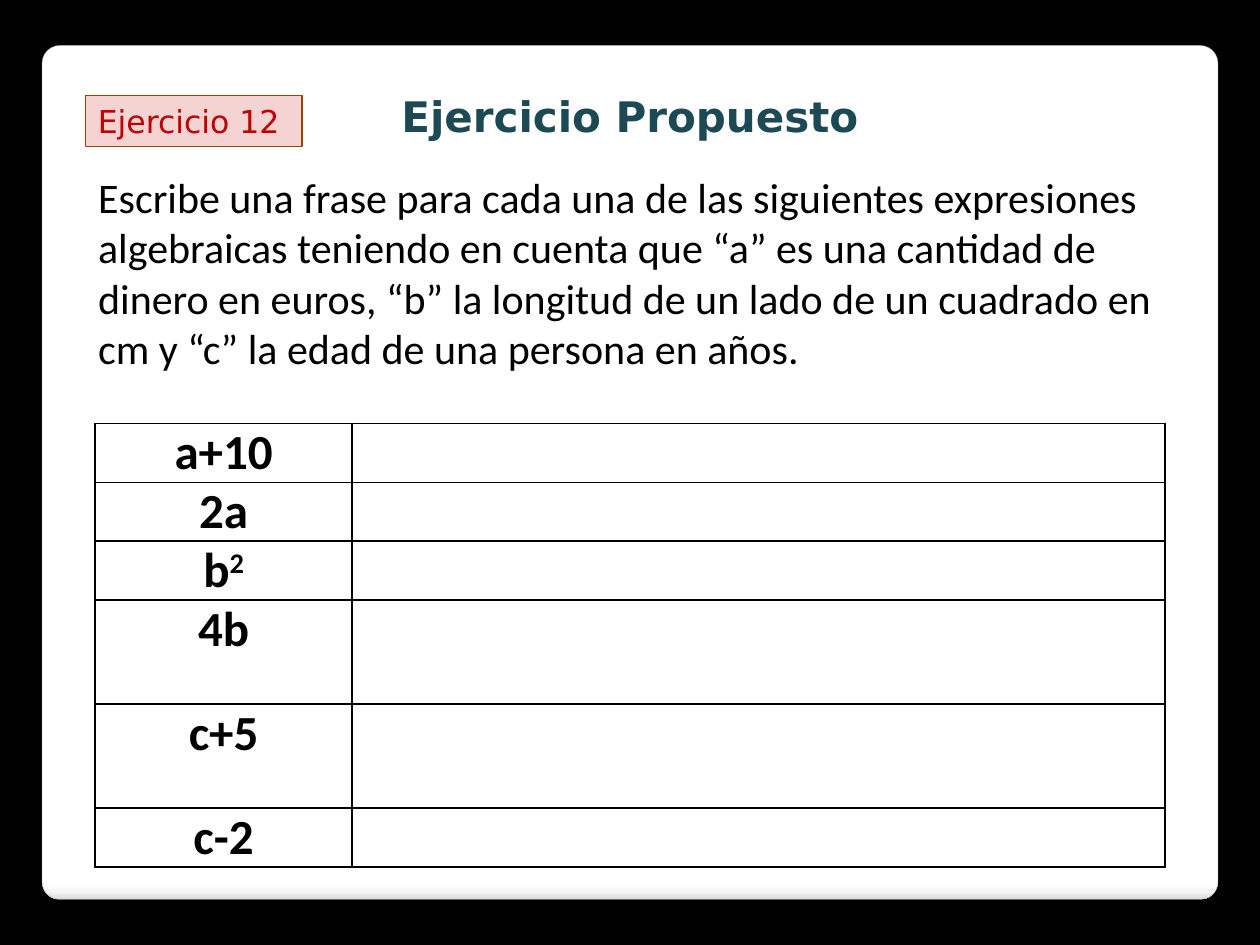
from pptx import Presentation
from pptx.dml.color import RGBColor
from pptx.enum.shapes import MSO_AUTO_SHAPE_TYPE as Shape
from pptx.enum.text import MSO_ANCHOR as Anchor, PP_ALIGN as Align
from pptx.oxml import parse_xml
from pptx.oxml.ns import nsdecls
from pptx.util import Pt

BLACK = RGBColor(0x00, 0x00, 0x00)
WHITE = RGBColor(0xFF, 0xFF, 0xFF)
PALE_GREY = RGBColor(0xF7, 0xF7, 0xF7)
LIGHT_GREY = RGBColor(0xDA, 0xDA, 0xDA)
GREY = RGBColor(0xA4, 0xA4, 0xA4)
TEAL = RGBColor(0x1C, 0x49, 0x54)
PINK = RGBColor(0xF5, 0xD3, 0xD3)
BROWN = RGBColor(0x96, 0x43, 0x05)
RED = RGBColor(0xC0, 0x00, 0x00)

HEADING_FONT = "DejaVu Sans"
BODY_FONT = "Calibri"

PANEL_STOPS = [(0, WHITE), (98, WHITE), (99, PALE_GREY), (100, LIGHT_GREY)]
STATEMENT = (
    "Escribe una frase para cada una de las siguientes expresiones algebraicas "
    "teniendo en cuenta que “a” es una cantidad de dinero en euros, “b” la longitud "
    "de un lado de un cuadrado en cm y “c” la edad de una persona en años."
)
SHORT_ROW, TALL_ROW = 33.7, 59.4
# Each row: base, exponent, height
EXPRESSIONS = [
    ("a+10", "", SHORT_ROW),
    ("2a", "", SHORT_ROW),
    ("b", "2", SHORT_ROW),
    ("4b", "", TALL_ROW),
    ("c+5", "", TALL_ROW),
    ("c-2", "", SHORT_ROW),
]


def add_span(para, text, *, size, font=BODY_FONT, color=BLACK, bold=False, raised=False):
    span = para.add_run()
    span.text = text
    span.font.size = Pt(size)
    span.font.name = font
    span.font.bold = bold
    span.font.color.rgb = color
    if raised:
        span.font._element.set("baseline", "30000")


class ExercisePage:
    """Draws the elements of one exercise slide; lengths are in points."""

    def __init__(self, page):
        self.page = page
        page.background.fill.solid()
        page.background.fill.fore_color.rgb = BLACK

    def shape(self, kind, area, line_color, line_width):
        box = self.page.shapes.add_shape(kind, *map(Pt, area))
        box.shadow.inherit = False
        box.line.color.rgb = line_color
        box.line.width = Pt(line_width)
        return box

    def panel(self, area, corner, stops):
        box = self.shape(Shape.ROUNDED_RECTANGLE, area, GREY, 0.16)
        box.adjustments[0] = corner
        stop_xml = "".join(
            f'<a:gs pos="{percent * 1000}"><a:srgbClr val="{color}"/></a:gs>'
            for percent, color in stops
        )
        box.fill.background()
        no_fill = box._element.spPr.find("{*}noFill")
        no_fill.getparent().replace(no_fill, parse_xml(
            f'<a:gradFill {nsdecls("a")}><a:gsLst>{stop_xml}</a:gsLst>'
            '<a:lin ang="5400000" scaled="0"/></a:gradFill>'
        ))

    def label(self, text, area, fill, **style):
        box = self.shape(Shape.RECTANGLE, area, BROWN, 0.75)
        box.fill.solid()
        box.fill.fore_color.rgb = fill
        self.fill_text(box, text, **style)

    def text(self, text, area, **style):
        self.fill_text(self.page.shapes.add_textbox(*map(Pt, area)), text, **style)

    def fill_text(self, box, text, align=Align.LEFT, **style):
        frame = box.text_frame
        frame.word_wrap = True
        frame.vertical_anchor = Anchor.TOP
        para = frame.paragraphs[0]
        para.alignment = align
        add_span(para, text, **style)

    def table(self, rows, left, top, widths):
        """Place the expressions in the first column, leaving the second for answers."""
        height = sum(row[2] for row in rows)
        table = self.page.shapes.add_table(
            len(rows), len(widths), Pt(left), Pt(top), Pt(sum(widths)), Pt(height)
        ).table
        table.first_row = table.horz_banding = False
        for column, width in zip(table.columns, widths):
            column.width = Pt(width)
        for row, (base, exponent, row_height) in zip(table.rows, rows):
            row.height = Pt(row_height)
            for cell in row.cells:
                self.frame_cell(cell)
            para = row.cells[0].text_frame.paragraphs[0]
            para.alignment = Align.CENTER
            add_span(para, base, size=28, bold=True)
            if exponent:
                add_span(para, exponent, size=28, bold=True, raised=True)

    def frame_cell(self, cell):
        cell.margin_left = cell.margin_right = Pt(5)
        cell.margin_top = cell.margin_bottom = Pt(0)
        properties = cell._tc.get_or_add_tcPr()
        for side in "LRTB":
            properties.append(parse_xml(
                f'<a:ln{side} {nsdecls("a")} w="{Pt(1)}"><a:solidFill>'
                f'<a:srgbClr val="{BLACK}"/></a:solidFill></a:ln{side}>'
            ))
        cell.fill.background()


def main():
    deck = Presentation()
    deck.slide_width, deck.slide_height = Pt(720), Pt(540)
    exercise = ExercisePage(deck.slides.add_slide(deck.slide_layouts[6]))

    exercise.panel((24, 26, 672, 488), 0.021, PANEL_STOPS)
    exercise.text("Ejercicio Propuesto", (28, 48.2, 664, 36), align=Align.CENTER,
                  size=24, font=HEADING_FONT, color=TEAL, bold=True)
    exercise.label("Ejercicio 12", (48.8, 54.7, 123.8, 29), PINK,
                   size=18, font=HEADING_FONT, color=RED)
    exercise.table(EXPRESSIONS, 54.3, 241.9, (146.9, 464.4))
    exercise.text(STATEMENT, (49, 94.3, 617, 165), size=24)

    deck.save("out.pptx")


if __name__ == "__main__":
    main()
